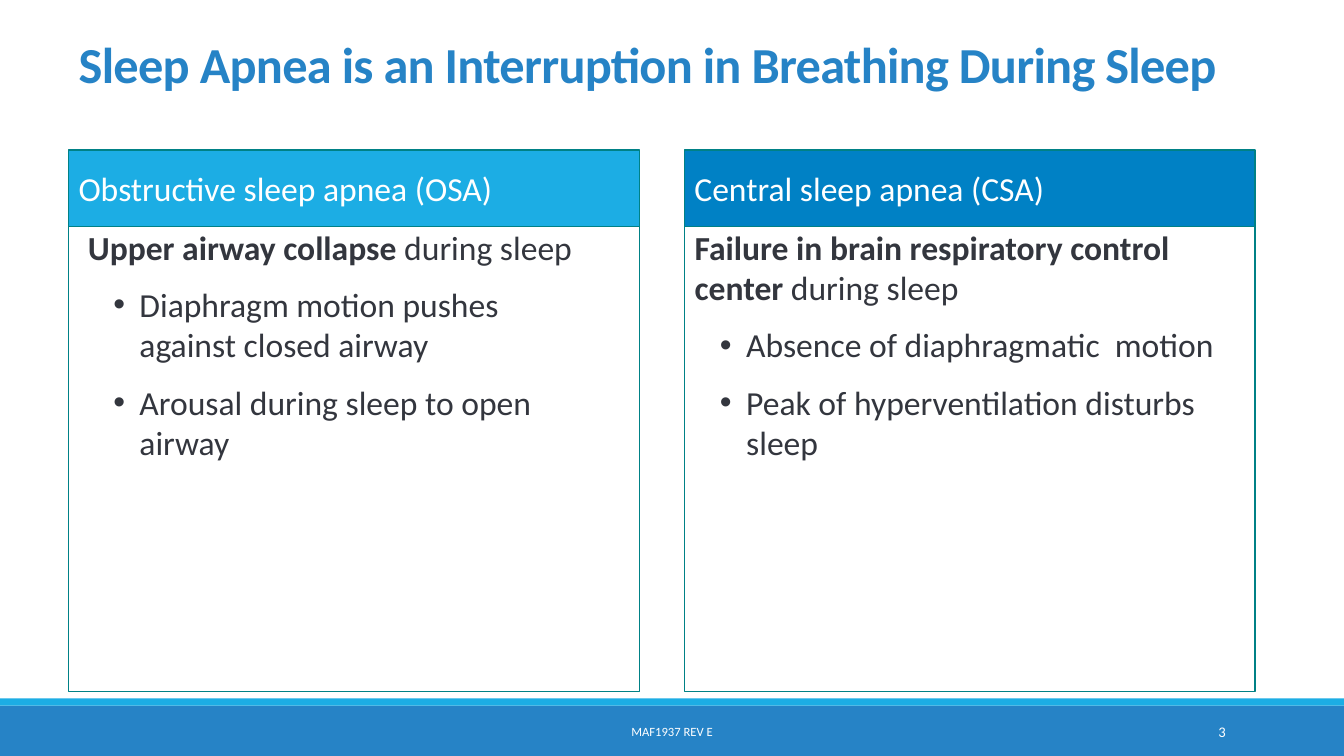
from dataclasses import dataclass
from typing import Any

from lxml.etree import SubElement
from pptx import Presentation
from pptx.dml.color import RGBColor
from pptx.enum.shapes import MSO_SHAPE as Preset
from pptx.enum.text import MSO_ANCHOR as Anchor, MSO_AUTO_SIZE as AutoSize, PP_ALIGN as Align
from pptx.oxml.ns import qn
from pptx.util import Cm, Pt

WHITE = RGBColor(0xFF, 0xFF, 0xFF)
BLUE = RGBColor(0x26, 0x83, 0xC6)
SKY = RGBColor(0x1C, 0xAD, 0xE4)
DEEP_BLUE = RGBColor(0x00, 0x81, 0xC5)
TEAL = RGBColor(0x00, 0x81, 0x86)
INK = RGBColor(0x33, 0x36, 0x3E)

PANEL_WIDTH = 14.38
HEADER_TOP, HEADER_HEIGHT = 3.78, 1.93
PANEL_TOP, PANEL_HEIGHT = 5.59, 11.84
FOOTER_TOP, FOOTER_HEIGHT = 17.93, 1.02
BULLET_MARGIN, BULLET_HANG = 1.3, 0.66


@dataclass(frozen=True)
class Area:
    left: float
    top: float
    width: float
    height: float


@dataclass(frozen=True)
class ApneaType:
    name: str
    color: RGBColor
    left: float
    list_area: Area
    cause: str
    cause_rest: str
    effects: tuple[str, ...]


@dataclass(frozen=True)
class FooterText:
    words: str
    area: Area
    size: float
    align: Align


APNEA_TYPES = (
    ApneaType("Obstructive sleep apnea (OSA)", SKY, 1.73,
              Area(1.96, PANEL_TOP, 13.26, 10.52),
              "Upper airway collapse", " during sleep",
              ("Diaphragm motion pushes against closed airway",
               "Arousal during sleep to open airway")),
    ApneaType("Central sleep apnea (CSA)", DEEP_BLUE, 17.25,
              Area(17.25, PANEL_TOP, PANEL_WIDTH, 9.22),
              "Failure in brain respiratory control center ", "during sleep",
              ("Absence of diaphragmatic  motion",
               "Peak of hyperventilation disturbs sleep")),
)

FOOTER_TEXTS = (
    FooterText("MAF1937 REV E", Area(10.24, FOOTER_TOP, 13.39, FOOTER_HEIGHT), 9, Align.CENTER),
    FooterText("3", Area(27.51, FOOTER_TOP, 3.63, FOOTER_HEIGHT), 10.5, Align.RIGHT),
)


def set_format(target: Any, values: dict[str, Any]) -> None:
    for name, value in values.items():
        setattr(target, name, value)


def place(shape: Any, area: Area) -> None:
    set_format(shape, {"left": Cm(area.left), "top": Cm(area.top),
                       "width": Cm(area.width), "height": Cm(area.height)})


def add_span(para: Any, words: str, size: float, color: RGBColor, bold: bool = False) -> Any:
    span = para.add_run()
    span.text = words
    set_format(span.font, {"name": "Calibri", "size": Pt(size), "bold": bold})
    span.font.color.rgb = color
    return span


def add_rectangle(page: Any, preset: Preset, area: Area, fill: RGBColor,
                  line: RGBColor | None = None) -> Any:
    box = page.shapes.add_shape(preset, Cm(area.left), Cm(area.top),
                                Cm(area.width), Cm(area.height))
    box.shadow.inherit = False
    box.fill.solid()
    box.fill.fore_color.rgb = fill
    if line is None:
        box.line.fill.background()
    else:
        box.line.color.rgb = line
        box.line.width = Pt(1)
    return box


def set_bullet(para: Any, margin: float, hang: float, mark: str = "") -> None:
    """Set the indent and the bullet mark; no mark means no bullet."""
    properties = para._p.get_or_add_pPr()
    properties.set("marL", str(Cm(margin)))
    properties.set("indent", str(-Cm(hang)))
    if mark:
        SubElement(properties, qn("a:buFont"), typeface="Arial")
        SubElement(properties, qn("a:buChar"), char=mark)
    else:
        SubElement(properties, qn("a:buNone"))


def write_title(title: Any) -> None:
    place(title, Area(1.73, 0.2, 32.14, 2.29))
    set_format(title.text_frame, {"vertical_anchor": Anchor.BOTTOM, "word_wrap": True,
                                  "auto_size": AutoSize.NONE})
    para = title.text_frame.paragraphs[0]
    set_format(para, {"alignment": Align.LEFT, "line_spacing": 0.85})
    span = add_span(para, "Sleep Apnea is an Interruption in Breathing During Sleep",
                    36, BLUE, True)
    span.font._element.set("spc", "-50")


def add_panel(page: Any, apnea: ApneaType) -> None:
    add_rectangle(page, Preset.FLOWCHART_PROCESS,
                  Area(apnea.left, PANEL_TOP, PANEL_WIDTH, PANEL_HEIGHT), WHITE, TEAL)
    header = add_rectangle(page, Preset.FLOWCHART_PROCESS,
                           Area(apnea.left, HEADER_TOP, PANEL_WIDTH, HEADER_HEIGHT),
                           apnea.color, TEAL)
    header.text_frame.vertical_anchor = Anchor.MIDDLE
    para = header.text_frame.paragraphs[0]
    para.alignment = Align.LEFT
    add_span(para, apnea.name, 24, WHITE)


def write_list(body: Any, apnea: ApneaType) -> None:
    """Fill a body placeholder and bring it in front of its panel."""
    place(body, apnea.list_area)
    frame = body.text_frame
    set_format(frame, {"word_wrap": True, "auto_size": AutoSize.NONE,
                       "vertical_anchor": Anchor.TOP})
    cause = frame.paragraphs[0]
    set_format(cause, {"space_before": Pt(0), "space_after": Pt(6)})
    set_bullet(cause, 0, 0)
    add_span(cause, apnea.cause, 24, INK, True)
    add_span(cause, apnea.cause_rest, 24, INK)
    for effect in apnea.effects:
        para = frame.add_paragraph()
        set_format(para, {"level": 1, "space_before": Pt(6), "space_after": Pt(6)})
        set_bullet(para, BULLET_MARGIN, BULLET_HANG, "•")
        add_span(para, effect, 24, INK)
    body.element.getparent().append(body.element)


def add_footer_text(page: Any, footer: FooterText) -> None:
    area = footer.area
    box = page.shapes.add_textbox(Cm(area.left), Cm(area.top), Cm(area.width), Cm(area.height))
    set_format(box.text_frame, {"word_wrap": True, "vertical_anchor": Anchor.MIDDLE})
    para = box.text_frame.paragraphs[0]
    para.alignment = footer.align
    add_span(para, footer.words, footer.size, WHITE)


def main() -> None:
    deck = Presentation()
    set_format(deck, {"slide_width": Cm(33.87), "slide_height": Cm(19.05)})
    page = deck.slides.add_slide(deck.slide_layouts.get_by_name("Two Content"))
    title, *bodies = page.placeholders

    add_rectangle(page, Preset.RECTANGLE, Area(0, 17.78, 33.87, 1.27), BLUE)
    add_rectangle(page, Preset.RECTANGLE, Area(0, 17.6, 33.87, 0.18), SKY)
    write_title(title)
    for apnea, body in zip(APNEA_TYPES, bodies):
        add_panel(page, apnea)
        write_list(body, apnea)
    for footer in FOOTER_TEXTS:
        add_footer_text(page, footer)
    deck.save("out.pptx")


if __name__ == "__main__":
    main()
